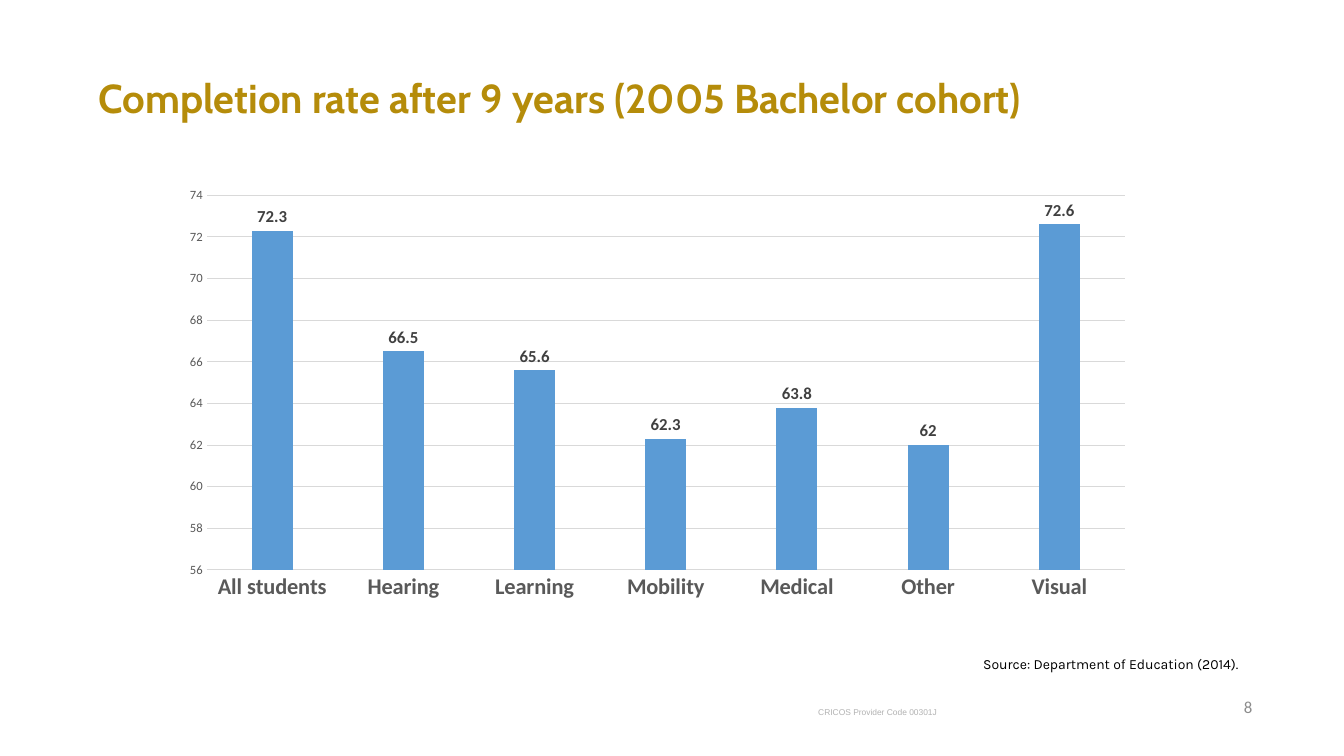
from lxml import etree
from pptx import Presentation
from pptx.chart.data import CategoryChartData
from pptx.dml.color import RGBColor
from pptx.enum.chart import XL_CHART_TYPE, XL_LABEL_POSITION, XL_TICK_MARK
from pptx.enum.text import MSO_ANCHOR, PP_ALIGN
from pptx.util import Inches, Pt

COLUMNS = XL_CHART_TYPE.COLUMN_CLUSTERED
OUTSIDE = XL_LABEL_POSITION.OUTSIDE_END
NO_TICK = XL_TICK_MARK.NONE
MIDDLE, TOP = MSO_ANCHOR.MIDDLE, MSO_ANCHOR.TOP
LEFT, RIGHT = PP_ALIGN.LEFT, PP_ALIGN.RIGHT

COLORS = {
    "title": "B58C0A", "bar": "5B9BD5", "grid": "D9D9D9", "axis": "595959",
    "label": "404040", "text": "000000", "code": "B2B2B2", "number": "8C8C8C",
}


def style_font(font, name, size, color, bold=False):
    values = {"name": name, "size": Pt(size), "bold": bold}
    for key, value in values.items():
        setattr(font, key, value)
    font.color.rgb = RGBColor.from_string(COLORS[color])


def style_line(line, color):
    line.color.rgb = RGBColor.from_string(COLORS[color])
    line.width = Pt(0.75)


deck = Presentation()
deck.slide_width, deck.slide_height = Inches(13.33), Inches(7.5)
page = deck.slides.add_slide(deck.slide_layouts[5])

# Title
title = page.shapes.title
title.left, title.top = Inches(0.88), Inches(0.63)
title.width, title.height = Inches(11.64), Inches(0.74)
title.text_frame.text = "Completion rate after 9 years (2005 Bachelor cohort)"
title.text_frame.vertical_anchor = MIDDLE
title.text_frame.word_wrap = True
para = title.text_frame.paragraphs[0]
para.alignment, para.line_spacing = LEFT, 0.9
style_font(para.runs[0].font, "Cabin", 28.8, "title", True)

# Completion rates by group
rates = {
    "All students": 72.3, "Hearing": 66.5, "Learning": 65.6, "Mobility": 62.3,
    "Medical": 63.8, "Other": 62, "Visual": 72.6,
}
data = CategoryChartData()
data.categories = list(rates)
data.add_series("Series 1", list(rates.values()))
chart = page.shapes.add_chart(
    COLUMNS, Inches(1.69), Inches(1.78), Inches(9.66), Inches(4.27), data).chart
chart.has_legend = chart.has_title = False
style_font(chart.font, "Calibri", 10, "text")

# Columns and their labels
plot = chart.plots[0]
plot.gap_width, plot.overlap = 219, -27
plot.vary_by_categories = False
series = plot.series[0]
series.format.fill.solid()
series.format.fill.fore_color.rgb = RGBColor.from_string(COLORS["bar"])
labels = series.data_labels
labels.show_value, labels.position = True, OUTSIDE
style_font(labels.font, "Calibri", 12, "label", True)

# Axes
groups, scale = chart.category_axis, chart.value_axis
for axis, size, bold in ((groups, 16, True), (scale, 9, False)):
    axis.major_tick_mark = axis.minor_tick_mark = NO_TICK
    style_font(axis.tick_labels.font, "Calibri", size, "axis", bold)
style_line(groups.format.line, "grid")
scale.minimum_scale, scale.maximum_scale, scale.major_unit = 56, 74, 2
scale.format.line.fill.background()
scale.has_major_gridlines = True
style_line(scale.major_gridlines.format.line, "grid")

# Source, provider code and page number
notes = [
    ("Source: Department of Education (2014).", (9.59, 6.45, 2.79, 0.27),
     "Karla", 10, "text", TOP, False),
    ("CRICOS Provider Code 00301J", (5.52, 6.97, 3.87, 0.2),
     "Arial", 6, "code", TOP, True),
    ("8", (9.52, 6.81, 3, 0.4), "Calibri", 12, "number", MIDDLE, True),
]
for text, place, font, size, color, anchor, wrap in notes:
    box = page.shapes.add_textbox(*[Inches(length) for length in place])
    frame = box.text_frame
    frame.text = text
    frame.word_wrap, frame.vertical_anchor = wrap, anchor
    para = frame.paragraphs[0]
    para.alignment = RIGHT
    style_font(para.runs[0].font, font, size, color)

deck.save("out.pptx")
